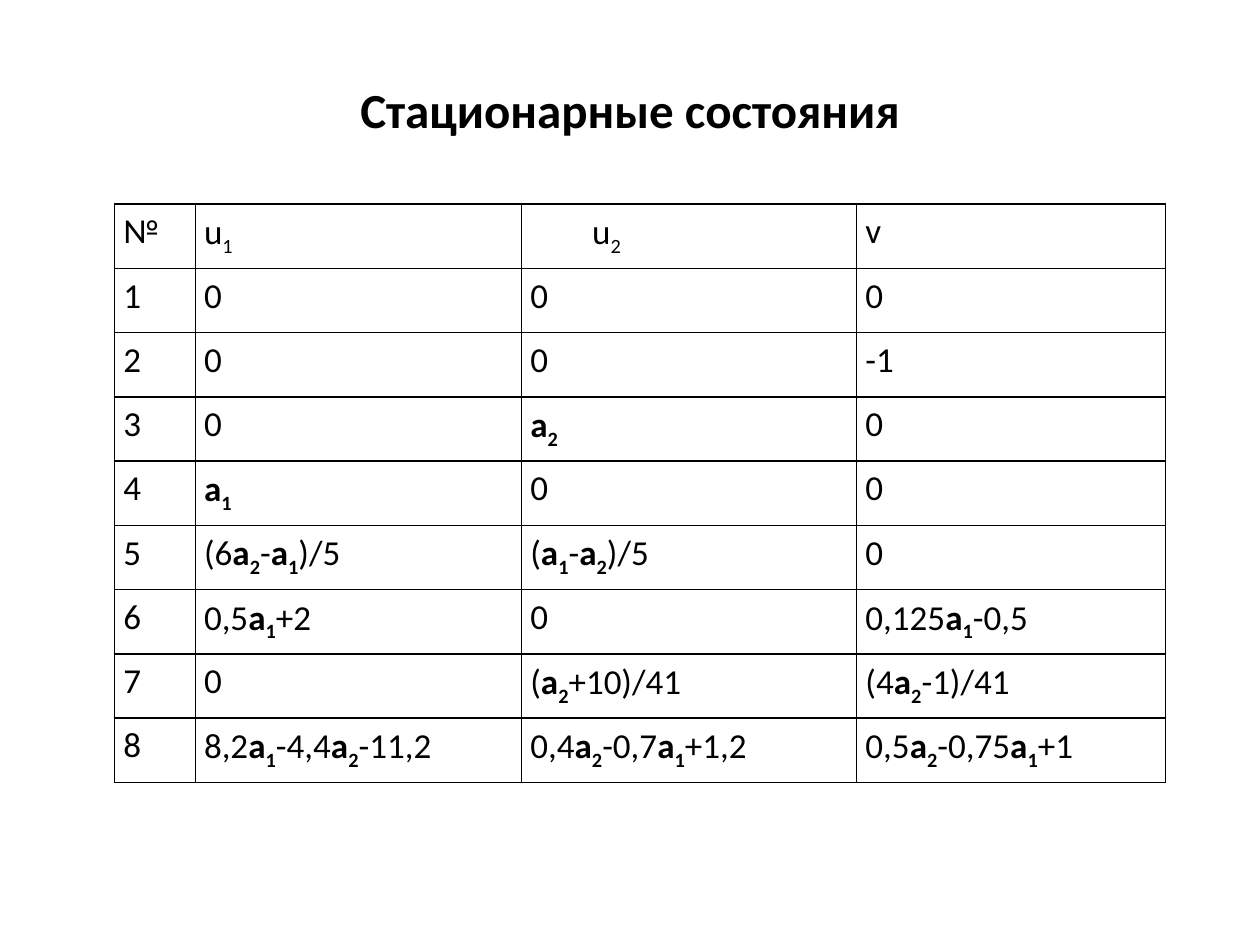
from dataclasses import dataclass

from lxml.etree import SubElement
from pptx import Presentation
from pptx.dml.color import RGBColor
from pptx.enum.text import MSO_ANCHOR as Anchor, PP_ALIGN as Align
from pptx.oxml.ns import qn
from pptx.util import Inches, Pt


@dataclass(frozen=True)
class Theme:
    font: str = "Calibri"
    ink: str = "000000"
    title_size: int = 28
    body_size: int = 20
    border_width: int = 1
    line_spacing: float = 1.15
    subscript: str = "-25000"


COLUMN_WIDTHS = (0.64, 2.59, 2.66, 2.45)
ROW_HEIGHT = 0.51
U2_INDENT = 0.49

# Indexed symbols stand between bars: "|a1|" is a with subscript 1.
STATES = (
    ("№", "|u1|", "|u2|", "v"),
    ("1", "0", "0", "0"),
    ("2", "0", "0", "-1"),
    ("3", "0", "|a2|", "0"),
    ("4", "|a1|", "0", "0"),
    ("5", "(6|a2|-|a1|)/5", "(|a1|-|a2|)/5", "0"),
    ("6", "0,5|а1|+2", "0", "0,125|а1|-0,5"),
    ("7", "0", "(|a2|+10)/41", "(4|a2|-1)/41"),
    ("8", "8,2|a1|-4,4|a2|-11,2", "0,4|a2|-0,7|a1|+1,2", "0,5|a2|-0,75|a1|+1"),
)


class SlideBuilder:
    def __init__(self, slide, theme):
        self.slide = slide
        self.theme = theme

    def style(self, paragraph, size, align):
        paragraph.alignment = align
        font = paragraph.font
        font.name = self.theme.font
        font.size = Pt(size)
        font.color.rgb = RGBColor.from_string(self.theme.ink)

    def title(self, text, left, top, width, height):
        title = self.slide.shapes.title
        title.left, title.top = Inches(left), Inches(top)
        title.width, title.height = Inches(width), Inches(height)
        frame = title.text_frame
        frame.text = text
        frame.vertical_anchor = Anchor.TOP
        heading = frame.paragraphs[0]
        self.style(heading, self.theme.title_size, Align.CENTER)
        heading.font.bold = True

    def formula(self, paragraph, markup):
        """Write markup as runs: symbols get a subscript, and parameters a are bold."""
        for position, part in enumerate(markup.split("|")):
            if position % 2 == 0:
                if part:
                    paragraph.add_run().text = part
                continue
            letter, index = part
            symbol, subscript = paragraph.add_run(), paragraph.add_run()
            symbol.text, subscript.text = letter, index
            if letter != "u":
                symbol.font.bold = subscript.font.bold = True
            subscript.font._element.set("baseline", self.theme.subscript)

    def borders(self, cell):
        properties = cell._tc.get_or_add_tcPr()
        for side in ("lnL", "lnR", "lnT", "lnB"):
            line = SubElement(properties, qn(f"a:{side}"), w=str(Pt(self.theme.border_width)))
            fill = SubElement(line, qn("a:solidFill"))
            SubElement(fill, qn("a:srgbClr"), val=self.theme.ink)

    def cell(self, cell, markup):
        cell.margin_left = cell.margin_right = Inches(0.07)
        cell.margin_top = cell.margin_bottom = 0
        self.borders(cell)
        cell.fill.background()
        paragraph = cell.text_frame.paragraphs[0]
        self.style(paragraph, self.theme.body_size, Align.JUSTIFY)
        paragraph.line_spacing = self.theme.line_spacing
        self.formula(paragraph, markup)

    def table(self, rows, widths, row_height, left, top):
        table = self.slide.shapes.add_table(
            len(rows), len(widths), Inches(left), Inches(top),
            Inches(sum(widths)), Inches(row_height * len(rows)),
        ).table
        table.first_row = table.horz_banding = False
        for column, width in zip(table.columns, widths):
            column.width = Inches(width)
        for row, entries in zip(table.rows, rows):
            row.height = Inches(row_height)
            for cell, markup in zip(row.cells, entries):
                self.cell(cell, markup)
        return table


def main():
    deck = Presentation()
    deck.slide_width, deck.slide_height = Inches(10), Inches(7.5)
    title_only = deck.slide_layouts[5]
    builder = SlideBuilder(deck.slides.add_slide(title_only), Theme())

    builder.title("Стационарные состояния", 0, 0.58, 10, 0.57)
    states = builder.table(STATES, COLUMN_WIDTHS, ROW_HEIGHT, 0.91, 1.62)
    u2_heading = states.cell(0, 2).text_frame.paragraphs[0]
    u2_heading._p.get_or_add_pPr().set("indent", str(Inches(U2_INDENT)))

    deck.save("out.pptx")


if __name__ == "__main__":
    main()
